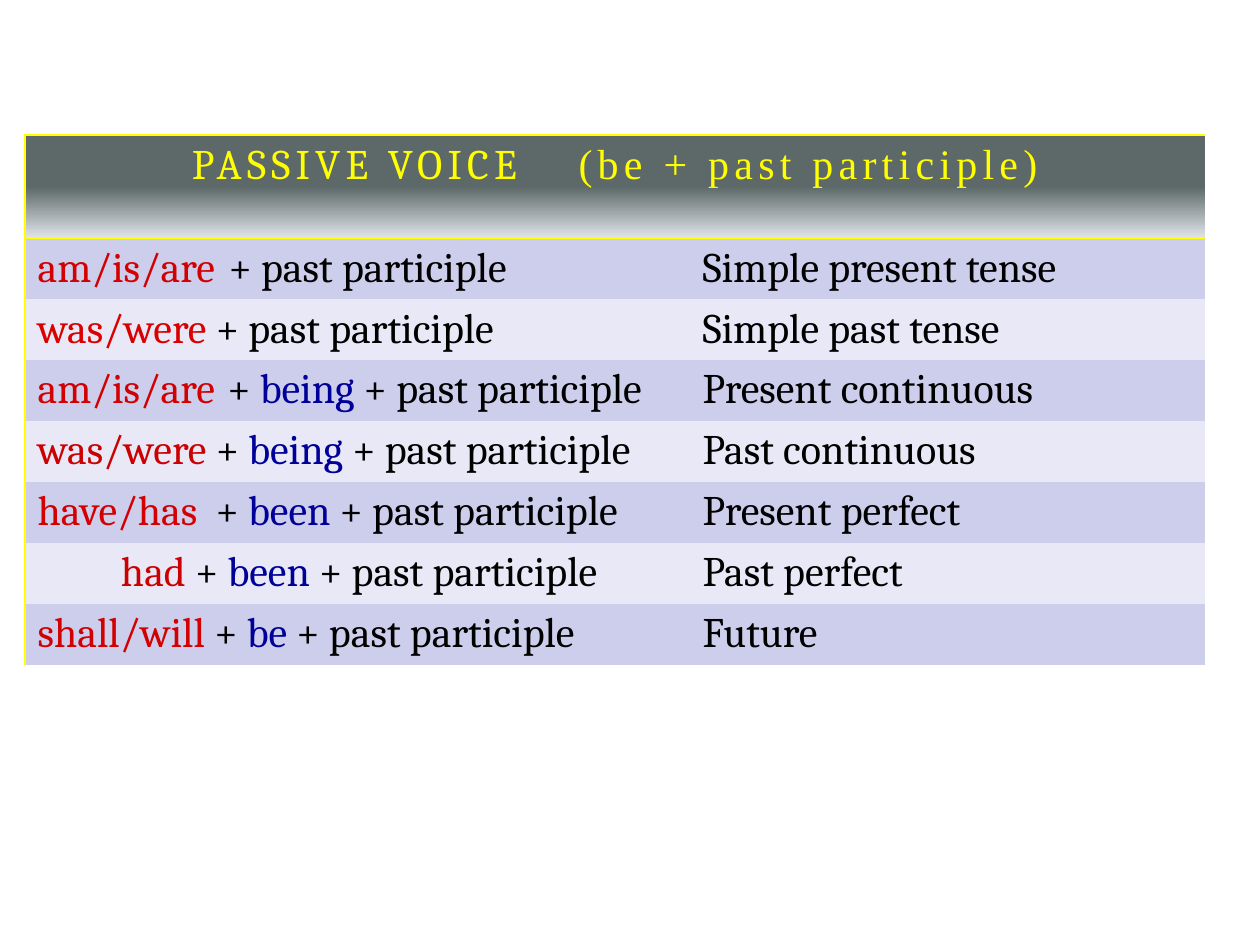
from lxml.etree import SubElement
from pptx import Presentation
from pptx.dml.color import RGBColor
from pptx.enum.text import PP_ALIGN
from pptx.oxml.ns import qn
from pptx.util import Pt

PX = 914400 // 126
YELLOW = RGBColor(0xFF, 0xFF, 0x00)
BLACK = RGBColor(0x00, 0x00, 0x00)
RED = RGBColor(0xD2, 0x00, 0x00)
BRIGHT_RED = RGBColor(0xDA, 0x00, 0x00)
DARK_RED = RGBColor(0xCC, 0x00, 0x00)
BLUE = RGBColor(0x00, 0x00, 0x99)
SLATE = RGBColor(0x5C, 0x69, 0x68)
MIST = RGBColor(0xE0, 0xE4, 0xE9)
BANDS = (RGBColor(0xCD, 0xCD, 0xEC), RGBColor(0xE8, 0xE8, 0xF6))
PLAIN_STYLE = "{2D5ABB26-0587-4C30-8999-92F81FD0307C}"

# Auxiliary, its colour, extra points in the gap after it, second auxiliary, tense
TENSES = [
    ("am/is/are", RED, 2.5, "", "Simple present tense"),
    ("was/were", BRIGHT_RED, -1.75, "", "Simple past tense"),
    ("am/is/are", RED, 1.75, "being", "Present continuous"),
    ("was/were", DARK_RED, 0, "being", "Past continuous"),
    ("have/has", RED, 5.25, "been", "Present perfect"),
    ("had", DARK_RED, 0, "been", "Past perfect"),
    ("shall/will", RED, 0, "be", "Future"),
]


def add_text(paragraph, text, color=BLACK, size=24, font="Cambria", spacing=0):
    run = paragraph.add_run()
    run.text = text
    run.font.size = Pt(size)
    run.font.name = font
    run.font.color.rgb = color
    if spacing:
        run.font._element.set("spc", str(round(spacing * 100)))


class GrammarSlide:
    def __init__(self, deck):
        self.slide = deck.slides.add_slide(deck.slide_layouts[6])

    def table(self, left, top, widths, heights):
        frame = self.slide.shapes.add_table(
            len(heights), len(widths), left * PX, top * PX,
            sum(widths) * PX, sum(heights) * PX)
        table = frame.table
        table.first_row = table.horz_banding = False
        table._tbl.tblPr.find(qn("a:tableStyleId")).text = PLAIN_STYLE
        for column, width in zip(table.columns, widths):
            column.width = width * PX
        for row, height in zip(table.rows, heights):
            row.height = height * PX
        return table

    def borders(self, cell, *sides):
        """Draw yellow lines; call before the cell is filled."""
        properties = cell._tc.get_or_add_tcPr()
        for side in sides:
            line = SubElement(properties, qn(f"a:ln{side}"), w=str(Pt(1)))
            fill = SubElement(line, qn("a:solidFill"))
            SubElement(fill, qn("a:srgbClr"), val=str(YELLOW))

    def header(self, cell):
        self.borders(cell, "L", "T", "B")
        cell.fill.gradient()
        cell.fill.gradient_angle = 270
        for stop, position, color in zip(
                cell.fill.gradient_stops, (0.5, 1), (SLATE, MIST)):
            stop.position = position
            stop.color.rgb = color
        title = cell.text_frame.paragraphs[0]
        title.alignment = PP_ALIGN.CENTER
        add_text(title, "PASSIVE VOICE", color=YELLOW, spacing=3)
        add_text(title, " ", color=YELLOW, size=18, font="Arial", spacing=27)
        add_text(title, "(be + past participle)", color=YELLOW,
                 font="Times New Roman", spacing=3)

    def body_cell(self, cell, band):
        cell.fill.solid()
        cell.fill.fore_color.rgb = band
        return cell.text_frame.paragraphs[0]


def main():
    deck = Presentation()
    deck.slide_width, deck.slide_height = 1260 * PX, 945 * PX
    page = GrammarSlide(deck)
    table = page.table(25, 135, [665, 515], [103] + [61] * len(TENSES))

    # Header across both columns
    table.cell(0, 0).merge(table.cell(0, 1))
    page.header(table.cell(0, 0))

    # One row for each tense
    for number, (auxiliary, color, gap, second, tense) in enumerate(TENSES, 1):
        band = BANDS[(number - 1) % 2]
        form_cell, tense_cell = table.cell(number, 0), table.cell(number, 1)
        page.borders(form_cell, "L")
        form = page.body_cell(form_cell, band)
        add_text(form, auxiliary, color=color)
        add_text(form, " ", spacing=gap)
        if second:
            add_text(form, "+ ")
            add_text(form, second, color=BLUE)
            add_text(form, " + past participle")
        else:
            add_text(form, "+ past participle")
        if auxiliary == "had":
            form_cell.margin_left = 96 * PX
        add_text(page.body_cell(tense_cell, band), tense)

    deck.save("out.pptx")


if __name__ == "__main__":
    main()
